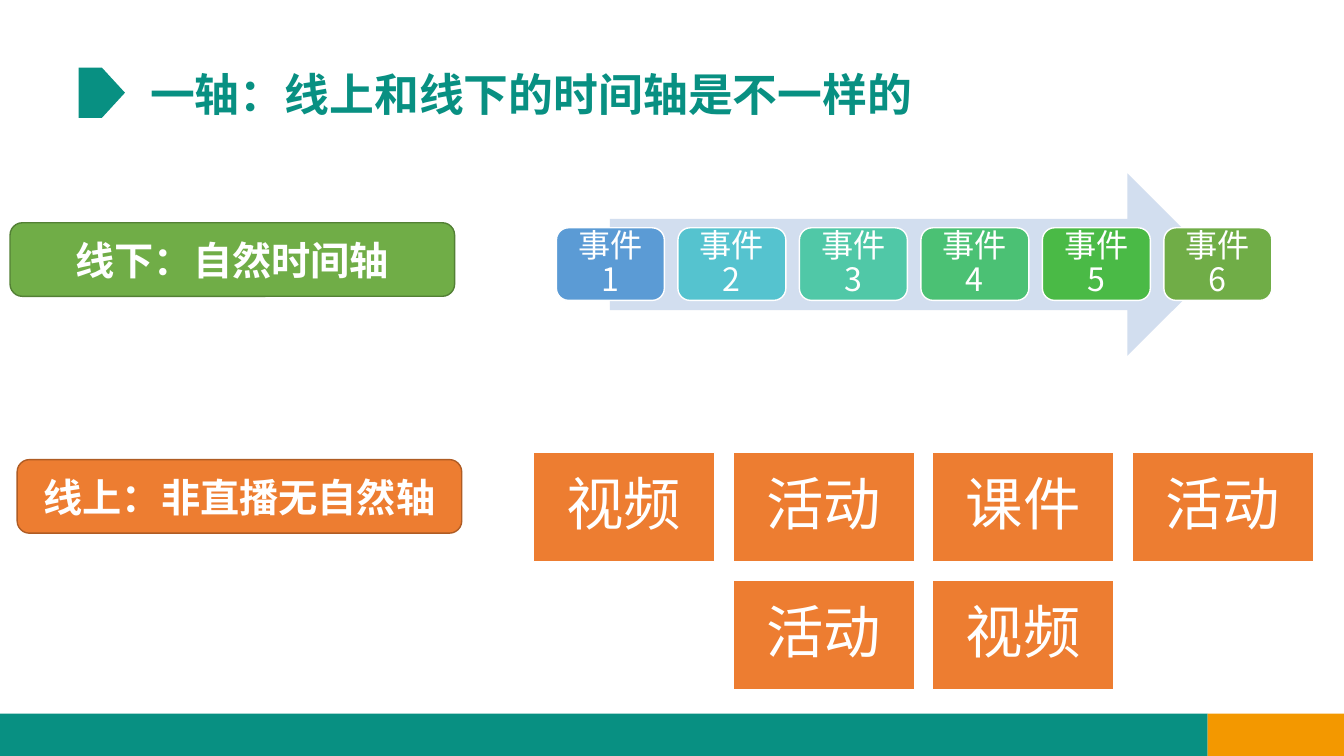
"""Build a slide that contrasts offline and online timelines."""
from pptx import Presentation
from pptx.dml.color import RGBColor as Rgb
from pptx.enum.shapes import MSO_SHAPE as Kind
from pptx.enum.text import MSO_ANCHOR as Anchor, PP_ALIGN as Align
from pptx.oxml.ns import qn
from pptx.util import Inches, Pt
from lxml.etree import SubElement as Sub

WIDE, HIGH = Inches(13.33), Inches(7.5)
COL, ROW = WIDE / 100, HIGH / 100
FONT = "Noto Sans CJK SC"
HUES = {
    "teal": "089082", "gold": "F39800", "pale": "D2DEEF", "white": "FFFFFF",
    "green": "70AD47", "moss": "538035", "orange": "ED7D31", "rust": "AF5C24",
}
STEPS = ["5B9BD5", "55C3CF", "50C8A7", "4BC174", "4ABA46", HUES["green"]]
CARDS = [(0, ["视频", "活动", "课件", "活动"]), (1, ["活动", "视频"])]


def place(left, top, width, height):
    return [round(n) for n in (left * COL, top * ROW, width * COL, height * ROW)]


def write(shape, text, size, hue, bold=False, align=Align.CENTER,
          anchor=Anchor.MIDDLE, space=0.9):
    frame = shape.text_frame
    frame.word_wrap = True
    frame.vertical_anchor = anchor
    para = frame.paragraphs[0]
    para.text = text
    para.alignment = align
    para.line_spacing = space
    font = para.font
    font.name, font.size, font.bold = FONT, Pt(size), bold
    font.color.rgb = Rgb.from_string(hue)
    Sub(para._p.pPr.find(qn("a:defRPr")), qn("a:ea"), typeface=FONT)


def block(slide, kind, box, fill, line=None):
    shape = slide.shapes.add_shape(kind, *place(*box))
    shape.shadow.inherit = False
    shape.fill.solid()
    shape.fill.fore_color.rgb = Rgb.from_string(fill)
    if line:
        shape.line.color.rgb = Rgb.from_string(line)
        shape.line.width = Pt(1)
    else:
        shape.line.fill.background()
    return shape


def header(slide, text):
    block(slide, Kind.PENTAGON, (5.85, 8.93, 3.45, 6.67), HUES["teal"])
    title = slide.shapes.add_textbox(*place(10.43, 8.93, 84.23, 7.87))
    write(title, text, 32, HUES["teal"], True, Align.LEFT, Anchor.TOP)


def footer(slide):
    split, top = 89.85, 94.4
    block(slide, Kind.RECTANGLE, (0, top, split, 100 - top), HUES["teal"])
    block(slide, Kind.RECTANGLE, (split, top, 100 - split, 100 - top), HUES["gold"])


def label(slide, left, top, text, fill, line):
    shape = block(slide, Kind.ROUNDED_RECTANGLE, (left, top, 33.08, 9.73), fill, line)
    write(shape, text, 28, HUES["white"], True, space=1.0)


def events(slide):
    block(slide, Kind.RIGHT_ARROW, (45.38, 22.93, 45.3, 24.13), HUES["pale"])
    for i, hue in enumerate(STEPS):
        box = (41.4 + 9.04 * i, 30.13, 8.03, 9.6)
        shape = block(slide, Kind.ROUNDED_RECTANGLE, box, hue, HUES["white"])
        shape.text_frame.margin_top = shape.text_frame.margin_bottom = Inches(0.1)
        write(shape, f"事件{i + 1}", 23, HUES["white"])


def cards(slide):
    for row, (start, names) in enumerate(CARDS):
        for col, name in enumerate(names, start):
            box = (39.68 + 14.85 * col, 59.87 + 16.9 * row, 13.5, 14.4)
            shape = block(slide, Kind.RECTANGLE, box, HUES["orange"], HUES["white"])
            write(shape, name, 41, HUES["white"])


def main():
    deck = Presentation()
    deck.slide_width, deck.slide_height = WIDE, HIGH
    slide = deck.slides.add_slide(deck.slide_layouts[6])
    header(slide, "一轴：线上和线下的时间轴是不一样的")
    footer(slide)
    events(slide)
    label(slide, 0.75, 29.47, "线下：自然时间轴", HUES["green"], HUES["moss"])
    label(slide, 1.28, 60.8, "线上：非直播无自然轴", HUES["orange"], HUES["rust"])
    cards(slide)
    deck.save("out.pptx")


if __name__ == "__main__":
    main()
